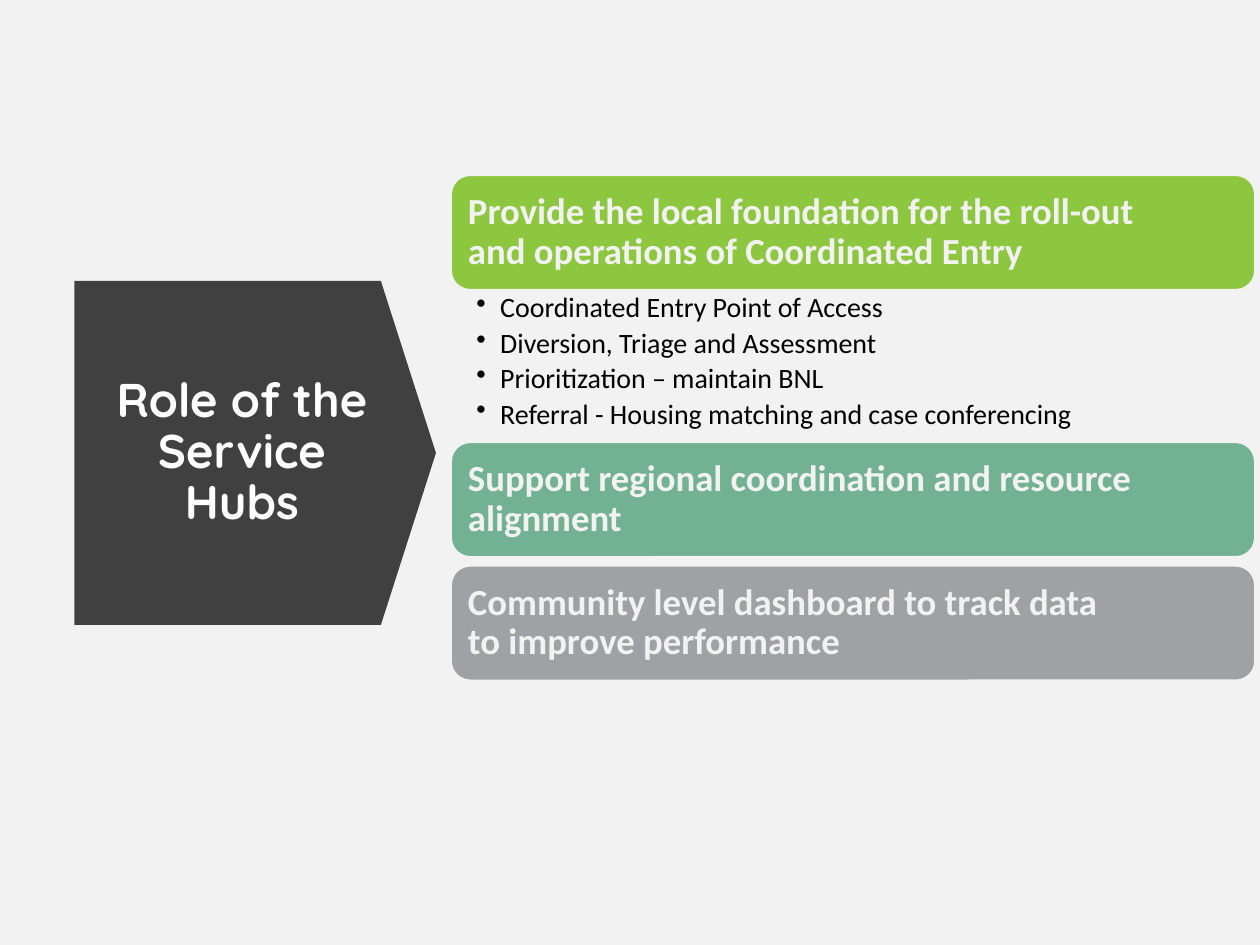
from lxml import etree
from pptx import Presentation
from pptx import util as u
from pptx.dml.color import RGBColor
from pptx.enum import shapes, text
from pptx.oxml.ns import qn

PALE = RGBColor(0xF2, 0xF2, 0xF2)
DARK = RGBColor(0x40, 0x40, 0x40)
WHITE = RGBColor(0xFF, 0xFF, 0xFF)
BLACK = RGBColor(0x00, 0x00, 0x00)
GREEN = RGBColor(0x8D, 0xC6, 0x3F)
TEAL = RGBColor(0x73, 0xB1, 0x93)
GRAY = RGBColor(0x9F, 0xA1, 0xA4)

LIST_LEFT, LIST_WIDTH, BAR_HEIGHT = 3.58, 6.38, 0.91
NBSP = chr(160)  # keeps two words on one line


class RolePage:
    body_font = "Calibri"
    title_font = "Quicksand"
    line_spacing = 0.9

    def __init__(self, deck):
        self.page = deck.slides.add_slide(deck.slide_layouts[6])
        fill = self.page.background.fill
        fill.solid()
        fill.fore_color.rgb = PALE

    def shape(self, kind, left, top, width, height, color):
        shape = self.page.shapes.add_shape(
            kind, *map(u.Inches, (left, top, width, height)))
        shape.shadow.inherit = False
        shape.fill.solid()
        shape.fill.fore_color.rgb = color
        shape.line.fill.background()
        return shape

    def frame(self, box, insets, anchor):
        frame = box.text_frame
        frame.word_wrap = True
        frame.vertical_anchor = anchor
        (frame.margin_left, frame.margin_top,
         frame.margin_right, frame.margin_bottom) = map(u.Inches, insets)
        return frame

    def text_box(self, left, top, width, height, insets, anchor):
        box = self.page.shapes.add_textbox(
            *map(u.Inches, (left, top, width, height)))
        return self.frame(box, insets, anchor)

    def add_span(self, para, words, font, size, color, bold=False,
                 align=text.PP_ALIGN.LEFT):
        para.alignment = align
        para.line_spacing = self.line_spacing
        span = para.add_run()
        span.text = words
        span.font.name = font
        span.font.size = u.Pt(size)
        span.font.bold = bold
        span.font.color.rgb = color

    def arrow(self):
        arrow = self.shape(shapes.MSO_SHAPE.DOWN_ARROW,
                           0.66, 2.16, 2.73, 2.87, DARK)
        arrow.rotation = 270
        arrow.adjustments[0] = 1
        arrow.adjustments[1] = 0.16

    def title(self, words):
        frame = self.text_box(0.84, 2.55, 2.16, 2.09,
                              (0.07, 0.04, 0.07, 0.04), text.MSO_ANCHOR.MIDDLE)
        self.add_span(frame.paragraphs[0], words, self.title_font, 27, WHITE,
                      bold=True, align=text.PP_ALIGN.CENTER)

    def bar(self, top, words, color):
        bar = self.shape(shapes.MSO_SHAPE.ROUNDED_RECTANGLE,
                         LIST_LEFT, top, LIST_WIDTH, BAR_HEIGHT, color)
        bar.line.color.rgb = PALE
        bar.line.width = u.Pt(1)
        frame = self.frame(bar, (0.09,) * 4, text.MSO_ANCHOR.MIDDLE)
        self.add_span(frame.paragraphs[0], words, self.body_font, 21, PALE,
                      bold=True)

    def bullets(self, top, height, items):
        frame = self.text_box(LIST_LEFT, top, LIST_WIDTH, height,
                              (0.2, 0.03, 0.16, 0.03), text.MSO_ANCHOR.TOP)
        for index, item in enumerate(items):
            para = frame.add_paragraph() if index else frame.paragraphs[0]
            para.space_after = u.Pt(3)
            self.add_span(para, item, self.body_font, 16, BLACK)
            # Hanging bullet
            props = para._p.get_or_add_pPr()
            props.set("marL", str(u.Inches(0.19)))
            props.set("indent", str(-u.Inches(0.19)))
            etree.SubElement(props, qn("a:buChar")).set("char", "•")


def main():
    deck = Presentation()
    deck.slide_width, deck.slide_height = u.Inches(10), u.Inches(7.5)
    page = RolePage(deck)

    # Arrow with the topic
    page.arrow()
    page.title("Role of the Service Hubs")

    # Roles, the first one with details
    page.bar(1.39, "Provide the local foundation for the roll-out "
                   f"and{NBSP}operations of{NBSP}Coordinated Entry", GREEN)
    page.bullets(2.3, 1.21, [
        "Coordinated Entry Point of Access",
        "Diversion, Triage and Assessment",
        "Prioritization – maintain BNL",
        f"Referral -{NBSP}Housing matching and case conferencing",
    ])
    page.bar(3.51, "Support regional coordination and resource alignment", TEAL)
    page.bar(4.49, "Community level dashboard to track data "
                   f"to{NBSP}improve performance", GRAY)

    deck.save("out.pptx")


if __name__ == "__main__":
    main()
